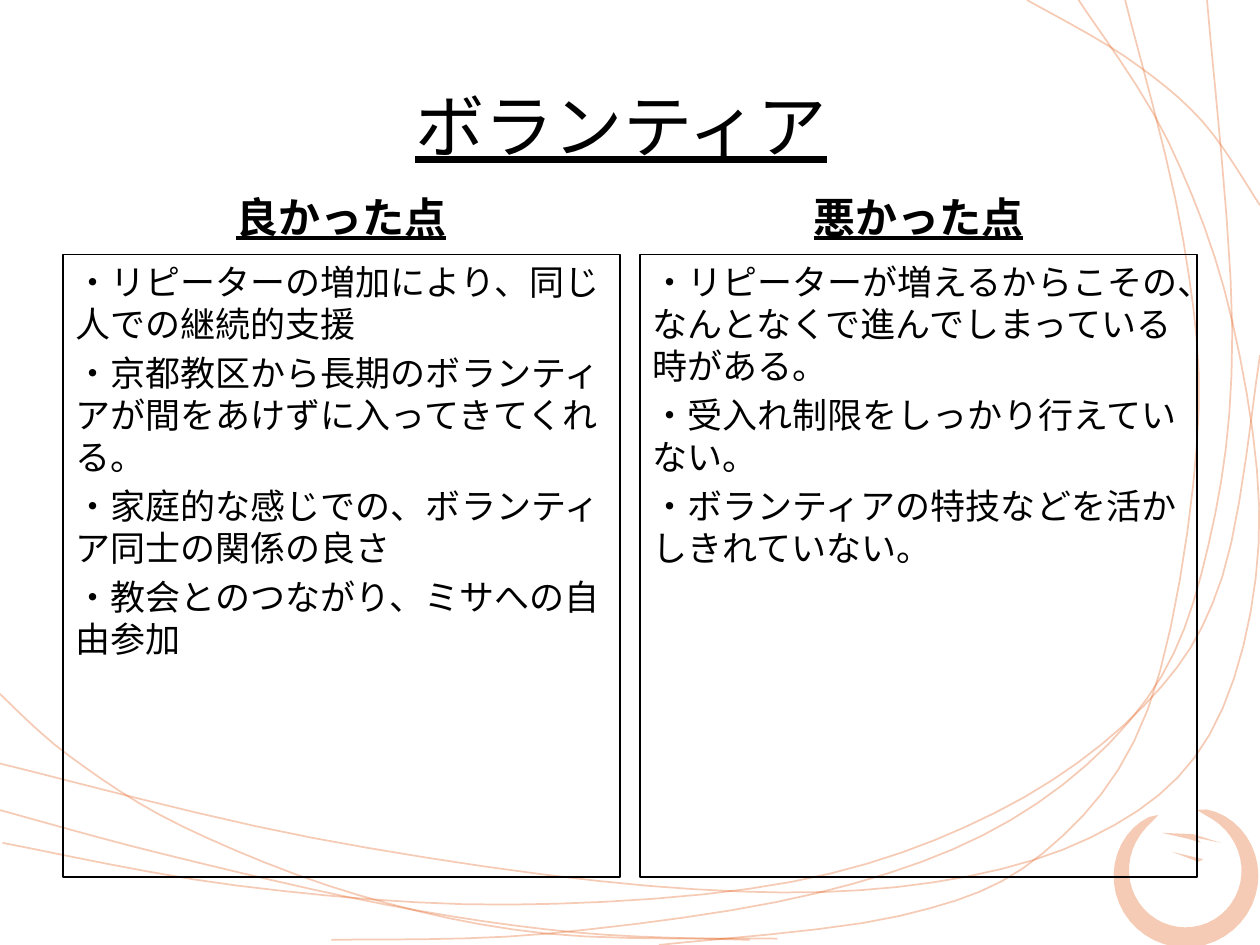
"""Build the volunteer review slide with good and bad points in two columns."""
from math import cos, pi, radians, sin, sqrt

from lxml.etree import SubElement
from pptx import Presentation
from pptx.dml.color import RGBColor
from pptx.enum.shapes import MSO_SHAPE
from pptx.enum.text import MSO_ANCHOR, MSO_AUTO_SIZE, PP_ALIGN
from pptx.oxml.ns import qn
from pptx.util import Inches, Pt

FONT = "Calibri"
BLACK = "000000"
ORANGE = "E3560E"

TITLE = "ボランティア"
COLUMNS = [
    ("良かった点", [
        "・リピーターの増加により、同じ人での継続的支援",
        "・京都教区から長期のボランティアが間をあけずに入ってきてくれる。",
        "・家庭的な感じでの、ボランティア同士の関係の良さ",
        "・教会とのつながり、ミサへの自由参加",
    ]),
    ("悪かった点", [
        "・リピーターが増えるからこその、なんとなくで進んでしまっている時がある。",
        "・受入れ制限をしっかり行えていない。",
        "・ボランティアの特技などを活かしきれていない。",
    ]),
]
COLUMN_LEFT, COLUMN_STEP, COLUMN_WIDTH = 0.5, 4.58, 4.42

STRANDS = [
    [(-0.03, 5.48), (0.55, 6), (1.45, 6.56), (2.83, 7.1), (4.34, 7.41), (6.17, 7.45)],
    [(5.23, 7.5), (7.14, 7.27), (8.28, 6.77), (9.11, 5.63), (9.5, 3.52), (9.39, 1.9), (8.93, 0)],
    [(0, 6.06), (2.48, 6.65), (5.14, 7.03), (7.12, 7.04), (8.65, 6.65), (9.6, 5.83),
     (9.99, 4.31), (9.78, 2.55), (9.27, 1.12), (8.56, 0)],
    [(0.02, 6.69), (1.89, 7.03), (4.03, 7.18), (6.28, 7), (7.9, 6.45), (9.08, 5.6),
     (9.7, 4.58), (10, 2.82)],
    [(2.63, 7.46), (4.35, 7.41), (6.48, 7.09), (8.02, 6.51), (9.1, 5.55), (9.59, 4.33),
     (9.78, 2.63), (9.58, 0)],
    [(8.15, 0), (8.93, 0.45), (9.54, 0.96), (10, 1.63)],
    [(0, 6.43), (1.3, 6.78), (3.06, 7.18), (4.56, 7.4), (5.95, 7.46)],
]
FLECKS = [
    [(9.22, 6.61), (9.47, 6.62), (9.69, 6.69), (9.5, 6.65), (9.53, 6.69), (9.44, 6.66)],
    [(9.3, 6.76), (9.55, 6.82), (9.51, 6.84)],
]
RING_CENTER = (9.41, 6.93)
RING_RADIUS, RING_THICKNESS = 0.51, 0.16
RING_START, RING_END = -80, 245


def smooth(knots, steps=6):
    """Pass a Catmull-Rom curve through the knots."""
    padded = [knots[0], *knots, knots[-1]]
    curve = [knots[0]]
    for a, b, c, d in zip(padded, padded[1:], padded[2:], padded[3:]):
        for step in range(1, steps + 1):
            t = step / steps
            curve.append(tuple(
                q + t * (r - p) / 2 + t**2 * (2 * p - 5 * q + 4 * r - s) / 2
                + t**3 * (3 * q - p - 3 * r + s) / 2
                for p, q, r, s in zip(a, b, c, d)))
    return curve


def brush_ring(steps=40):
    """Trace an open ring that tapers at both ends."""
    edges = {1: [], -1: []}
    for step in range(steps + 1):
        t = step / steps
        angle = radians(RING_START + t * (RING_END - RING_START))
        half = RING_THICKNESS / 2 * sqrt(abs(sin(pi * t)))
        for side, edge in edges.items():
            radius = RING_RADIUS + side * half
            edge.append((RING_CENTER[0] + radius * cos(angle), RING_CENTER[1] + radius * sin(angle)))
    return edges[1] + edges[-1][::-1]


def paint(fill, color, opacity=100):
    """Set a solid colour with an optional opacity percentage."""
    fill.solid()
    fill.fore_color.rgb = RGBColor.from_string(color)
    if opacity < 100:
        tint = fill._xPr.find(qn("a:solidFill"))[0]
        SubElement(tint, qn("a:alpha"), val=str(opacity * 1000))


def draw_outline(page, points, closed):
    """Draw a filled brush mark or an open strand."""
    start, *rest = [(Inches(x), Inches(y)) for x, y in points]
    builder = page.shapes.build_freeform(*start)
    builder.add_line_segments(rest, close=closed)
    shape = builder.convert_to_shape()
    shape.shadow.inherit = False
    if closed:
        paint(shape.fill, ORANGE, 30)
        shape.line.fill.background()
    else:
        shape.fill.background()
        shape.line.width = Pt(1)
        paint(shape.line.fill, ORANGE, 29)


def write(box, lines, size, anchor, align, bold=False, underline=False):
    """Fill a box with paragraphs and format their runs."""
    frame = box.text_frame
    frame.word_wrap = True
    frame.auto_size = MSO_AUTO_SIZE.NONE
    frame.vertical_anchor = anchor
    frame.text = "\n".join(lines)
    for index, para in enumerate(frame.paragraphs):
        para.alignment = align
        para.space_before = Pt(size * 0.2 if index else 0)
        for span in para.runs:
            font = span.font
            font.name, font.size = FONT, Pt(size)
            font.bold, font.underline = bold, underline
            paint(font.fill, BLACK)
            SubElement(font._element, qn("a:ea"), typeface=FONT)


def main():
    """Build and save the slide."""
    deck = Presentation()
    deck.slide_width, deck.slide_height = Inches(10), Inches(7.5)
    page = deck.slides.add_slide(deck.slide_layouts[5])

    for knots in STRANDS:
        draw_outline(page, smooth(knots), closed=False)
    for points in [brush_ring(), *FLECKS]:
        draw_outline(page, points, closed=True)

    title = page.shapes.title
    title.left, title.top, title.width, title.height = map(Inches, (0.43, 0.68, 9, 0.62))
    write(title, [TITLE], 39.6, MSO_ANCHOR.MIDDLE, PP_ALIGN.CENTER, underline=True)

    for index, (heading, points) in enumerate(COLUMNS):
        left, width = Inches(COLUMN_LEFT + index * COLUMN_STEP), Inches(COLUMN_WIDTH)
        label = page.shapes.add_textbox(left, Inches(1.47), width, Inches(0.5))
        write(label, [heading], 24, MSO_ANCHOR.BOTTOM, PP_ALIGN.CENTER, bold=True, underline=True)
        panel = page.shapes.add_shape(MSO_SHAPE.RECTANGLE, left, Inches(2.02), width, Inches(4.94))
        panel.shadow.inherit = False
        panel.fill.background()
        panel.line.width = Pt(0.75)
        paint(panel.line.fill, BLACK)
        write(panel, points, 20, MSO_ANCHOR.TOP, PP_ALIGN.LEFT)

    deck.save("out.pptx")


if __name__ == "__main__":
    main()
